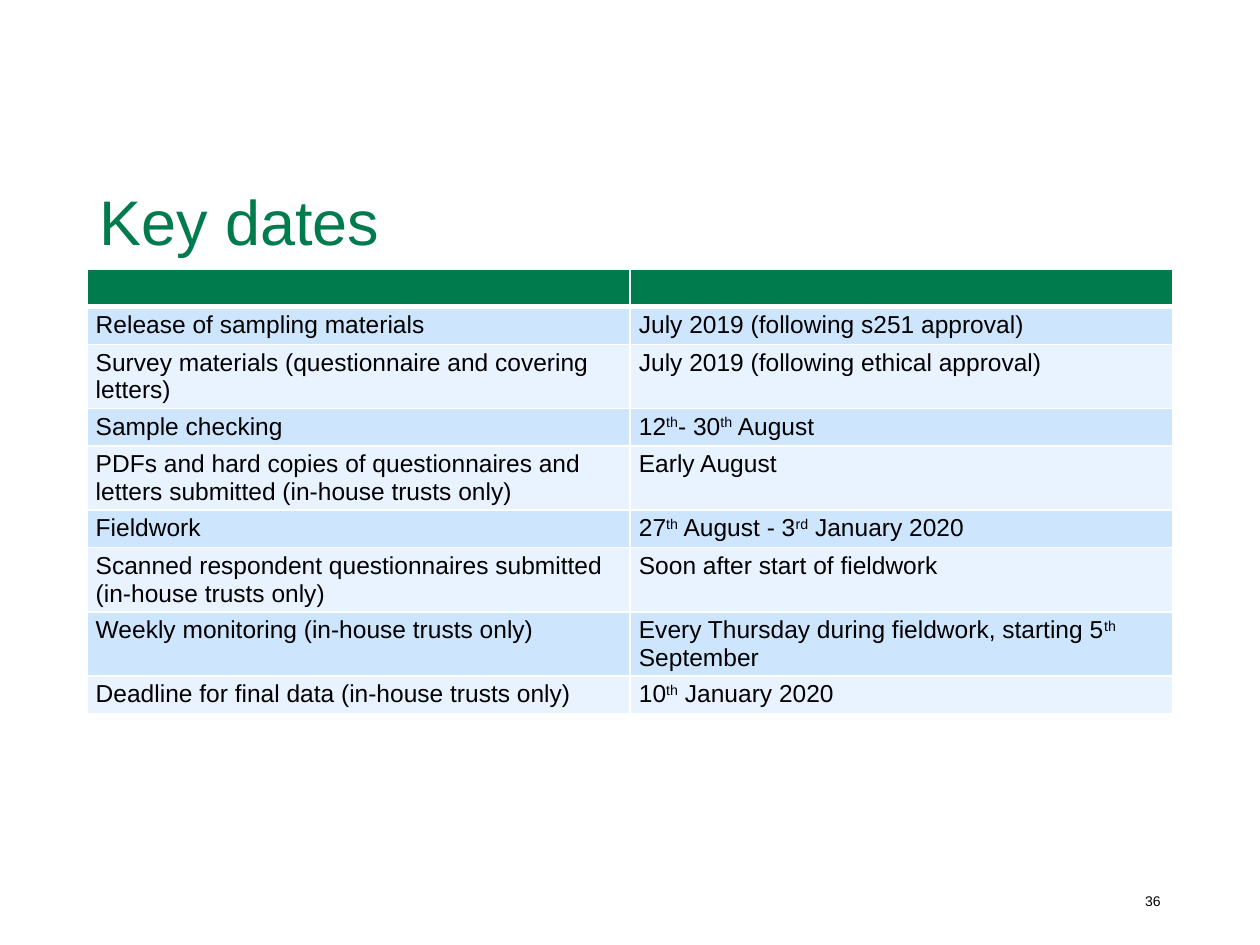
import dataclasses

import lxml.etree
import pptx
import pptx.dml.color
import pptx.enum.text
import pptx.oxml.ns
import pptx.util

Cm = pptx.util.Cm
Pt = pptx.util.Pt
Align = pptx.enum.text.PP_ALIGN
Anchor = pptx.enum.text.MSO_ANCHOR


@dataclasses.dataclass(frozen=True)
class Theme:
    font: str = "Arial"
    green: str = "007B4E"
    dark_band: str = "CEE5FE"
    light_band: str = "E8F3FF"
    white: str = "FFFFFF"
    black: str = "000000"
    title_size: int = 36
    table_size: int = 14
    number_size: int = 8
    thin_line: int = 1
    thick_line: int = 3


KEY_DATES = [
    ("Release of sampling materials", "July 2019 (following s251 approval)"),
    ("Survey materials (questionnaire and covering letters)", "July 2019 (following ethical approval)"),
    ("Sample checking", "12^th^- 30^th^ August"),
    ("PDFs and hard copies of questionnaires and letters submitted (in-house trusts only)", "Early August"),
    ("Fieldwork", "27^th^ August - 3^rd^ January 2020"),
    ("Scanned respondent questionnaires submitted (in-house trusts only)", "Soon after start of fieldwork"),
    ("Weekly monitoring (in-house trusts only)", "Every Thursday during fieldwork, starting 5^th^ September"),
    ("Deadline for final data (in-house trusts only)", "10^th^ January 2020"),
]


def rgb(color):
    return pptx.dml.color.RGBColor.from_string(color)


class SlideBuilder:
    def __init__(self, slide, theme):
        self.slide = slide
        self.theme = theme

    def style(self, para, size, color):
        para.font.name = self.theme.font
        para.font.size = Pt(size)
        para.font.color.rgb = rgb(color)

    def text(self, words, left, top, width, height, size, color, align=Align.LEFT, spacing=1.0):
        box = self.slide.shapes.add_textbox(Cm(left), Cm(top), Cm(width), Cm(height))
        frame = box.text_frame
        frame.word_wrap = True
        frame.vertical_anchor = Anchor.MIDDLE
        para = frame.paragraphs[0]
        para.alignment = align
        para.line_spacing = spacing
        para.add_run().text = words
        self.style(para, size, color)

    def borders(self, cell, top, bottom):
        properties = cell._tc.get_or_add_tcPr()
        thin = self.theme.thin_line
        for side, width in (("L", thin), ("R", thin), ("T", top), ("B", bottom)):
            line = lxml.etree.SubElement(
                properties, pptx.oxml.ns.qn(f"a:ln{side}"), w=str(Pt(width)))
            fill = lxml.etree.SubElement(line, pptx.oxml.ns.qn("a:solidFill"))
            lxml.etree.SubElement(fill, pptx.oxml.ns.qn("a:srgbClr"), val=self.theme.white)

    def cell(self, cell, words, fill, top, bottom):
        self.borders(cell, top, bottom)
        cell.fill.solid()
        cell.fill.fore_color.rgb = rgb(fill)
        cell.margin_left = cell.margin_right = Cm(0.18)
        cell.margin_top = cell.margin_bottom = Cm(0.09)
        para = cell.text_frame.paragraphs[0]
        self.style(para, self.theme.table_size, self.theme.black)
        if not words:
            lxml.etree.SubElement(
                para._p, pptx.oxml.ns.qn("a:endParaRPr"), sz=str(self.theme.table_size * 100))
            return
        for index, part in enumerate(words.split("^")):
            span = para.add_run()
            span.text = part
            if index % 2:
                span._r.get_or_add_rPr().set("baseline", "30000")

    def table(self, rows, left, top, width, row_height):
        theme = self.theme
        rows = [("", "")] + rows
        columns = len(rows[0])
        frame = self.slide.shapes.add_table(
            len(rows), columns, Cm(left), Cm(top), Cm(width), Cm(row_height * len(rows)))
        grid = frame.table
        for column in grid.columns:
            column.width = Cm(width / columns)
        for index, row in enumerate(rows):
            grid.rows[index].height = Cm(row_height)
            band = theme.dark_band if index % 2 else theme.light_band
            fill = band if index else theme.green
            above = theme.thick_line if index == 1 else theme.thin_line
            below = theme.thick_line if index == 0 else theme.thin_line
            for position, words in enumerate(row):
                self.cell(grid.cell(index, position), words, fill, above, below)


def main():
    theme = Theme()
    deck = pptx.Presentation()
    deck.slide_width = Cm(25.4)
    deck.slide_height = Cm(19.05)
    builder = SlideBuilder(deck.slides.add_slide(deck.slide_layouts[6]), theme)
    builder.table(KEY_DATES, 1.75, 5.42, 21.9, 0.76)
    builder.text("Key dates", 1.75, 3.15, 21.9, 2.77, theme.title_size, theme.green, spacing=0.9)
    builder.text("36", 17.94, 17.66, 5.71, 1.01, theme.number_size, theme.black, Align.RIGHT)
    deck.save("out.pptx")


if __name__ == "__main__":
    main()
